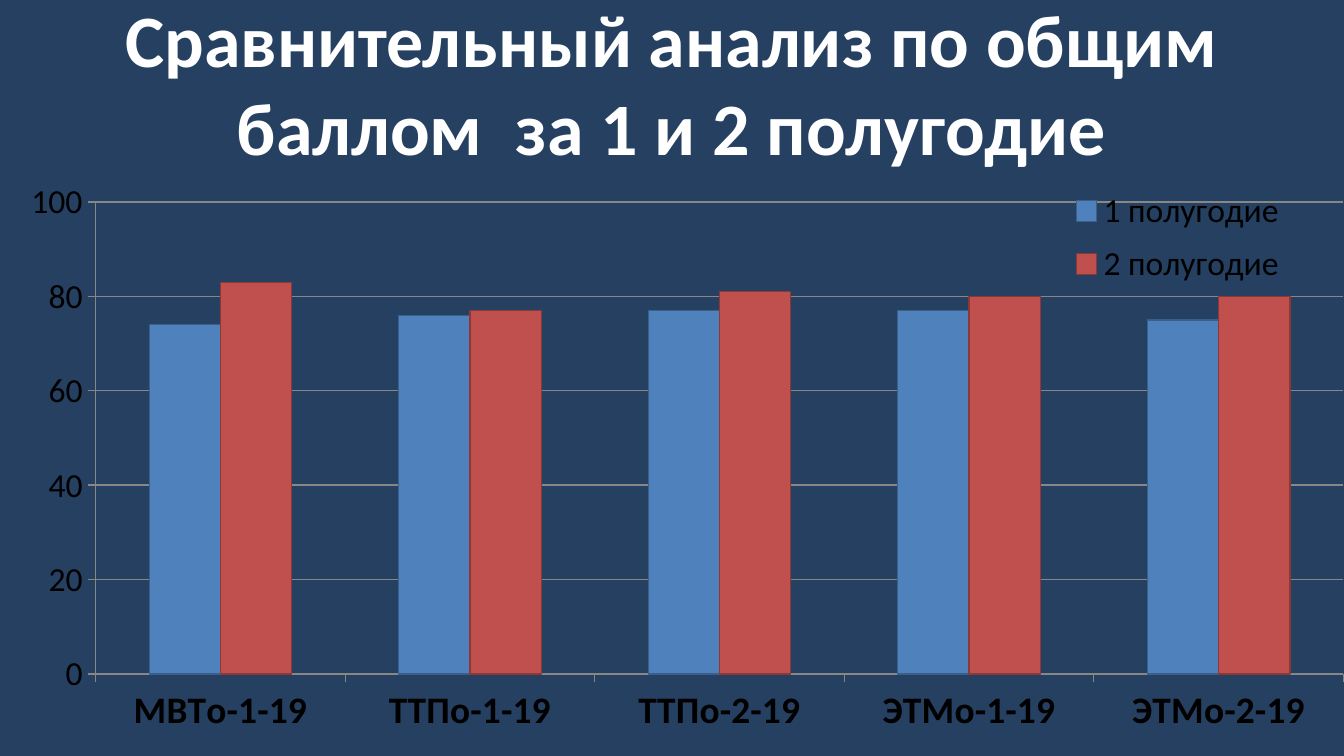
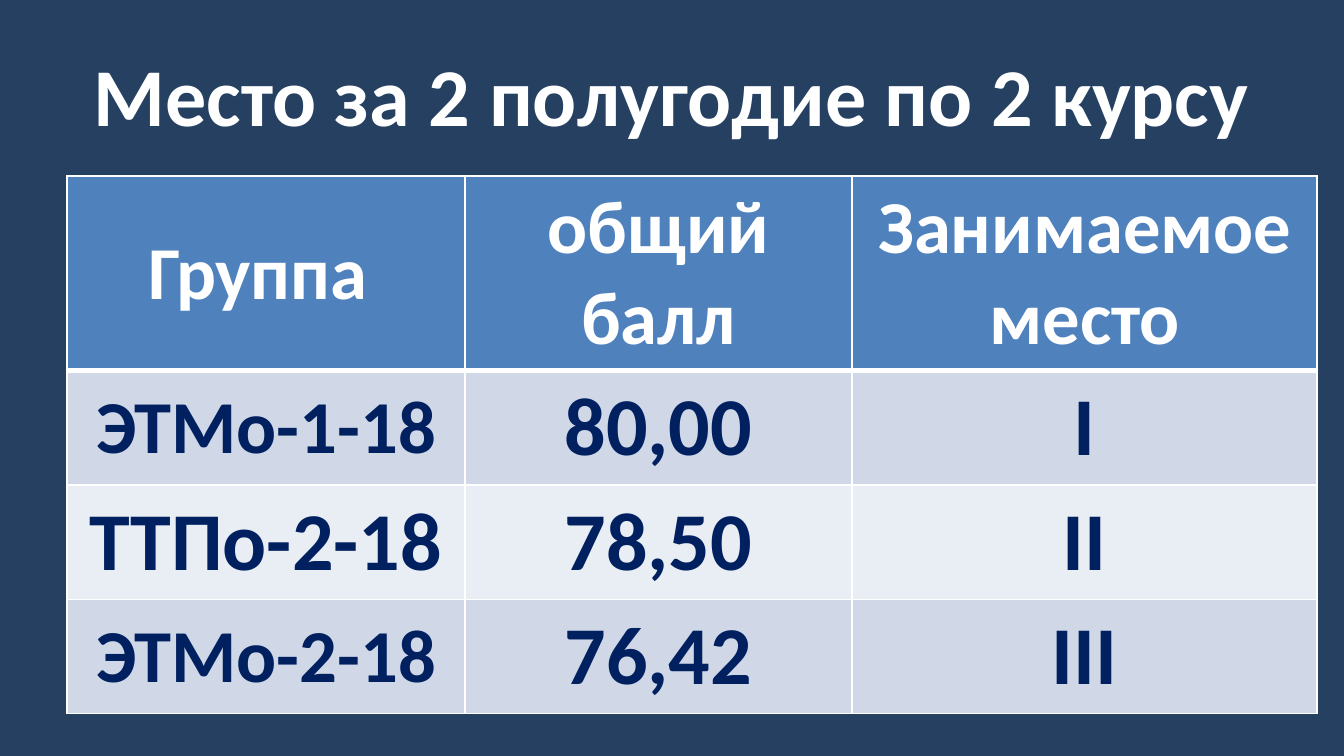
from dataclasses import dataclass

from lxml import etree
from pptx import Presentation
from pptx.chart.data import CategoryChartData
from pptx.dml.color import RGBColor
from pptx.enum.chart import XL_CHART_TYPE as ChartType, XL_LEGEND_POSITION as LegendPosition
from pptx.enum.chart import XL_TICK_MARK as TickMark
from pptx.enum.text import MSO_ANCHOR as Anchor, PP_ALIGN as Align
from pptx.oxml.ns import qn
from pptx.util import Inches, Pt


@dataclass(frozen=True)
class Theme:
    """Colours, font and type sizes that the slides share."""
    font: str = "Calibri"
    background: str = "254061"
    white: str = "FFFFFF"
    black: str = "000000"
    navy: str = "002060"
    grid: str = "878787"
    header: str = "4F81BD"
    bands: tuple = ("D0D8E8", "E9EDF4")
    series: tuple = (("4F81BD", "3A5F8B"), ("C0504D", "8C3836"))
    large: float = 44
    medium: float = 40
    long_title: float = 39.6
    category: float = 20
    chart: float = 18


THEME = Theme()
GROUPS = ("МВТо-1-19", "ТТПо-1-19", "ТТПо-2-19", "ЭТМо-1-19", "ЭТМо-2-19")
SCORES = {
    "1 полугодие": (74, 76, 77, 77, 75),
    "2 полугодие": (83, 77, 81, 80, 80),
}
HEADINGS = ("Группа ", "общий балл", "Занимаемое место")
PLACES = (
    ("ЭТМо-1-18", "80,00", "I"),
    ("ТТПо-2-18", "78,50", "II"),
    ("ЭТМо-2-18", "76,42", "III"),
)
GROUP_SIZES = (THEME.medium, THEME.large, THEME.medium)


def rgb(colour):
    """Turn a hex string into a colour."""
    return RGBColor.from_string(colour)


def style_font(font, size, colour, bold=False):
    """Apply the theme font with a size, colour and weight."""
    font.name = THEME.font
    font.size = Pt(size)
    font.bold = bold
    font.color.rgb = rgb(colour)


def write_text(text_frame, text, size, colour):
    """Write one bold centred paragraph in the middle of a frame."""
    text_frame.word_wrap = True
    text_frame.vertical_anchor = Anchor.MIDDLE
    paragraph = text_frame.paragraphs[0]
    paragraph.alignment = Align.CENTER
    run = paragraph.add_run()
    run.text = text
    style_font(run.font, size, colour, bold=True)


def add_slide(presentation):
    """Add a blank slide with the shared background."""
    slide = presentation.slides.add_slide(presentation.slide_layouts[6])
    slide.background.fill.solid()
    slide.background.fill.fore_color.rgb = rgb(THEME.background)
    return slide


def add_title(slide, text, left, top, width, size):
    """Add a slide title."""
    shape = slide.shapes.add_textbox(Inches(left), Inches(top), Inches(width), Inches(0.94))
    write_text(shape.text_frame, text, size, THEME.white)


def make_layout(left, top, width, height, inner=False):
    """Build a manual chart layout in fractions of the chart."""
    layout = etree.Element(qn("c:layout"))
    manual = etree.SubElement(layout, qn("c:manualLayout"))
    settings = [("layoutTarget", "inner")] if inner else []
    settings += [("xMode", "edge"), ("yMode", "edge"),
                 ("x", left), ("y", top), ("w", width), ("h", height)]
    for name, value in settings:
        etree.SubElement(manual, qn(f"c:{name}")).set("val", str(value))
    return layout


def drop_layout(element):
    """Remove the automatic layout of a chart part."""
    for layout in element.findall(qn("c:layout")):
        element.remove(layout)


def style_axis(axis, size, bold=False):
    """Set the labels, ticks and line of an axis."""
    style_font(axis.tick_labels.font, size, THEME.black, bold)
    axis.major_tick_mark = TickMark.OUTSIDE
    axis.minor_tick_mark = TickMark.NONE
    axis.format.line.color.rgb = rgb(THEME.grid)
    axis.format.line.width = Pt(0.75)


def style_legend(chart):
    """Lay the legend over the upper right of the plot."""
    chart.has_legend = True
    legend = chart.legend
    legend.position = LegendPosition.RIGHT
    legend.include_in_layout = True
    style_font(legend.font, THEME.chart, THEME.black)
    element = legend._element
    drop_layout(element)
    element.find(qn("c:legendPos")).addnext(make_layout(0.78, 0.02, 0.19, 0.2))


def add_score_chart(slide):
    """Add the clustered columns comparing the two half-years."""
    data = CategoryChartData()
    data.categories = GROUPS
    for name, values in SCORES.items():
        data.add_series(name, values)
    chart = slide.shapes.add_chart(ChartType.COLUMN_CLUSTERED, Inches(0.12), Inches(1.24),
                                   Inches(9.88), Inches(4.39), data).chart
    chart.has_title = False
    style_font(chart.font, THEME.chart, THEME.black)
    style_axis(chart.category_axis, THEME.category, bold=True)
    value_axis = chart.value_axis
    style_axis(value_axis, THEME.chart)
    value_axis.minimum_scale = 0
    value_axis.maximum_scale = 100
    value_axis.major_unit = 20
    value_axis.has_major_gridlines = True
    grid_line = value_axis.major_gridlines.format.line
    grid_line.color.rgb = rgb(THEME.grid)
    grid_line.width = Pt(0.75)
    plot = chart.plots[0]
    plot.gap_width = 150
    plot.overlap = 0
    plot.vary_by_categories = False
    for series, (fill, outline) in zip(plot.series, THEME.series):
        series.format.fill.solid()
        series.format.fill.fore_color.rgb = rgb(fill)
        series.format.line.color.rgb = rgb(outline)
        series.format.line.width = Pt(0.75)
    plot_area = chart._chartSpace.find(f".//{qn('c:plotArea')}")
    drop_layout(plot_area)
    plot_area.insert(0, make_layout(0.06, 0.06, 0.94, 0.8, inner=True))
    style_legend(chart)


def border_cell(cell, top=1, bottom=1):
    """Draw white borders around a cell, widths in points."""
    properties = cell._tc.get_or_add_tcPr()
    for index, (side, width) in enumerate((("L", 1), ("R", 1), ("T", top), ("B", bottom))):
        line = etree.Element(qn(f"a:ln{side}"), w=str(Pt(width)))
        fill = etree.SubElement(line, qn("a:solidFill"))
        etree.SubElement(fill, qn("a:srgbClr"), val=THEME.white)
        properties.insert(index, line)


def fill_cell(cell, text, size, colour, fill, top=1, bottom=1):
    """Write, fill and border one table cell."""
    write_text(cell.text_frame, text, size, colour)
    cell.vertical_anchor = Anchor.MIDDLE
    cell.fill.solid()
    cell.fill.fore_color.rgb = rgb(fill)
    border_cell(cell, top, bottom)


def add_place_table(slide):
    """Add the ranking of the groups."""
    widths = (2.96, 2.88, 3.46)
    heights = (1.45,) + (0.85,) * len(PLACES)
    table = slide.shapes.add_table(len(heights), len(widths), Inches(0.5), Inches(1.31),
                                   Inches(sum(widths)), Inches(sum(heights))).table
    for column, width in zip(table.columns, widths):
        column.width = Inches(width)
    for row, height in zip(table.rows, heights):
        row.height = Inches(height)
    for column, heading in enumerate(HEADINGS):
        fill_cell(table.cell(0, column), heading, THEME.medium, THEME.white,
                  THEME.header, bottom=3)
    for row, (values, group_size) in enumerate(zip(PLACES, GROUP_SIZES), start=1):
        band = THEME.bands[(row - 1) % 2]
        for column, value in enumerate(values):
            size = THEME.large if column else group_size
            fill_cell(table.cell(row, column), value, size, THEME.navy, band,
                      top=3 if row == 1 else 1)


def main():
    """Build and save the two slides."""
    presentation = Presentation()
    presentation.slide_width = Inches(10)
    presentation.slide_height = Inches(10) * 9 // 16

    slide = add_slide(presentation)
    add_title(slide, "Сравнительный анализ по общим баллом  за 1 и 2 полугодие",
              0.12, 0.14, 9.76, THEME.long_title)
    add_score_chart(slide)

    slide = add_slide(presentation)
    add_title(slide, "Место за 2 полугодие по 2 курсу", 0.5, 0.23, 9, THEME.large)
    add_place_table(slide)

    presentation.save("out.pptx")


if __name__ == "__main__":
    main()
